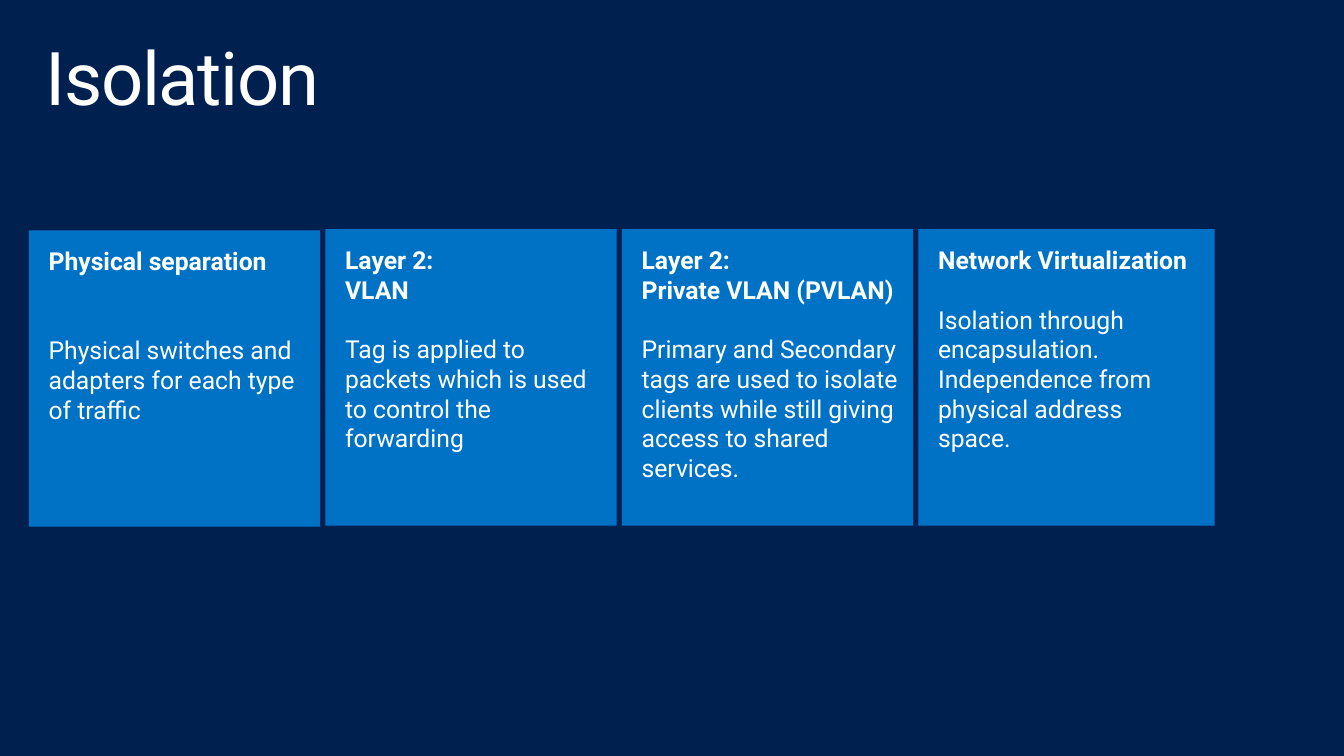
from pptx import Presentation
from pptx.dml.color import RGBColor
from pptx.enum.shapes import MSO_SHAPE
from pptx.enum.text import MSO_ANCHOR, MSO_AUTO_SIZE, PP_ALIGN
from pptx.util import Cm, Pt

RECTANGLE = MSO_SHAPE.RECTANGLE
TOP = MSO_ANCHOR.TOP
NO_AUTOFIT = MSO_AUTO_SIZE.NONE
LEFT = PP_ALIGN.LEFT
FONT = "Roboto"
WHITE = "FFFFFF"
NAVY = "002050"
BLUE = "0072C6"
LINE_HEIGHT = 21.6


def color(value):
    return RGBColor.from_string(value)


def format_paragraph(para, size, bold):
    para.alignment = LEFT
    para.font.name = FONT
    para.font.size = Pt(size)
    para.font.bold = bold
    para.font.color.rgb = color(WHITE)


deck = Presentation()
deck.slide_width = Cm(34.54)
deck.slide_height = Cm(19.43)
page = deck.slides.add_slide(deck.slide_layouts[5])
page.background.fill.solid()
page.background.fill.fore_color.rgb = color(NAVY)

title = page.shapes.title
title.left, title.top, title.width, title.height = Cm(0.76), Cm(0.81), Cm(33.02), Cm(2.54)
frame = title.text_frame
frame.text = "Isolation"
frame.auto_size = NO_AUTOFIT
frame.vertical_anchor = TOP
frame.margin_left = frame.margin_right = Cm(0.41)
frame.margin_top = frame.margin_bottom = Cm(0.25)
heading = frame.paragraphs[0]
format_paragraph(heading, 54, False)
heading.line_spacing = 0.9
heading.runs[0].font._element.set("spc", "-100")

cards = [
    (["Physical separation"], 2,
     "Physical switches and adapters for each type of traffic", 5.92, 7.49, 0.51),
    (["Layer 2:", "VLAN"], 1,
     "Tag is applied to packets which is used to control the forwarding", 5.89, 7.49, 0.51),
    (["Layer 2:", "Private VLAN (PVLAN)"], 1,
     "Primary and Secondary tags are used to isolate clients while still giving "
     "access to shared services.", 5.89, 7.49, 0.25),
    (["Network Virtualization"], 1,
     "Isolation through encapsulation. Independence from physical address space.",
     5.89, 7.62, 0.51),
]

for column, (names, gap_lines, description, top, width, right_margin) in enumerate(cards):
    box = page.shapes.add_shape(
        RECTANGLE, Cm(0.74 + 7.62 * column), Cm(top), Cm(width), Cm(7.62))
    box.shadow.inherit = False
    box.fill.solid()
    box.fill.fore_color.rgb = color(BLUE)
    box.line.fill.background()
    frame = box.text_frame
    frame.word_wrap = True
    frame.vertical_anchor = TOP
    frame.margin_left = Cm(0.51)
    frame.margin_right = Cm(right_margin)
    frame.margin_top = frame.margin_bottom = Cm(0.41)
    frame.text = "\n".join([*names, description])
    for para in frame.paragraphs:
        format_paragraph(para, 18, True)
    para.font.bold = False
    para.space_before = Pt(LINE_HEIGHT * gap_lines)

deck.save("out.pptx")
